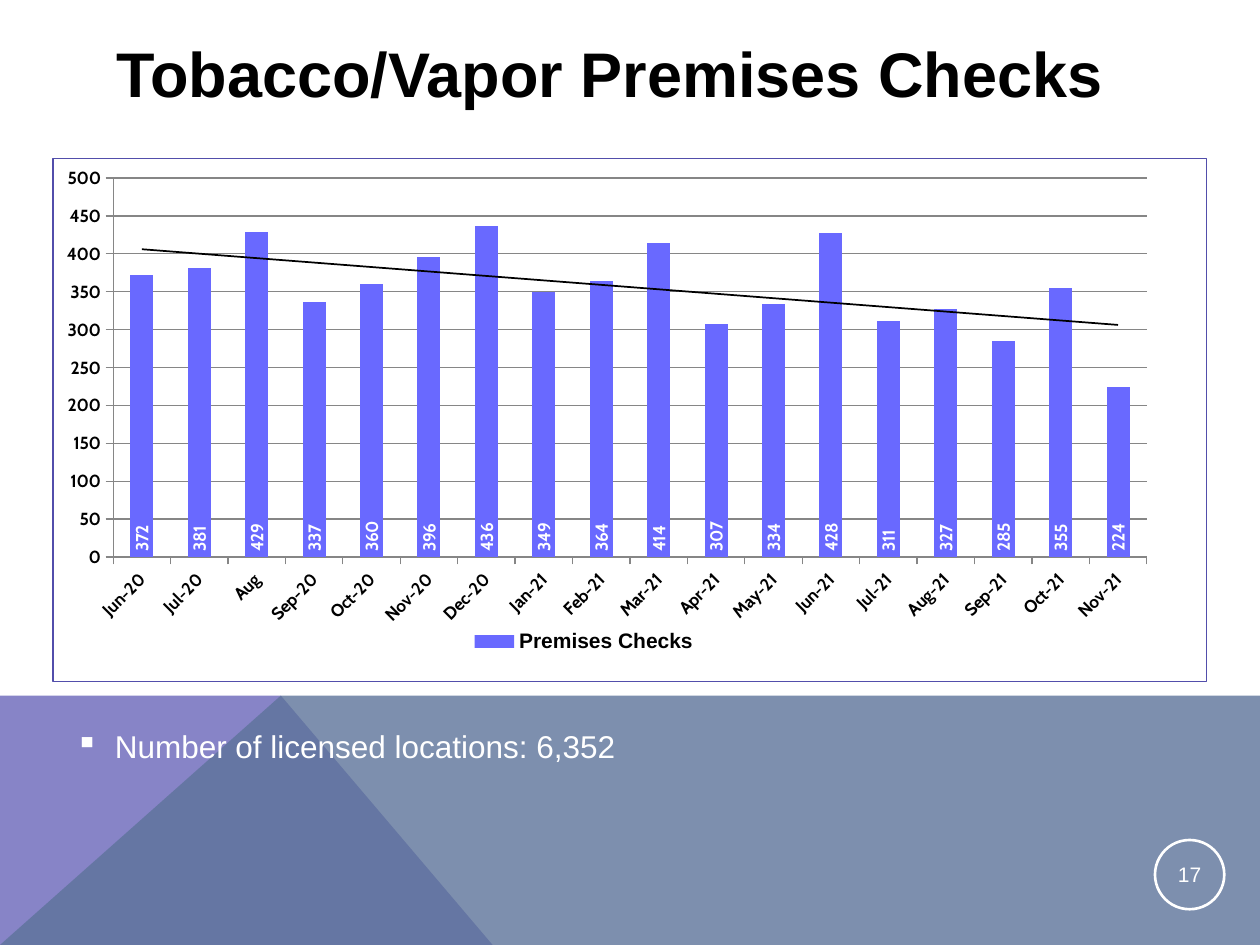
"""Build the premises checks slide: column chart with trend line over a faceted footer."""
from dataclasses import dataclass

from lxml.etree import SubElement
from pptx import Presentation
from pptx.chart.data import CategoryChartData
from pptx.dml.color import RGBColor
from pptx.enum.chart import XL_CHART_TYPE as ChartType
from pptx.enum.chart import XL_LABEL_POSITION as LabelPosition
from pptx.enum.chart import XL_LEGEND_POSITION as LegendPosition
from pptx.enum.chart import XL_TICK_MARK as TickMark
from pptx.enum.shapes import MSO_SHAPE as Preset
from pptx.enum.text import MSO_ANCHOR as Anchor
from pptx.enum.text import PP_ALIGN as Align
from pptx.oxml import parse_xml
from pptx.oxml.ns import nsdecls, qn
from pptx.util import Pt

BLACK = RGBColor(0x00, 0x00, 0x00)
WHITE = RGBColor(0xFF, 0xFF, 0xFF)
GRAY = RGBColor(0x86, 0x86, 0x86)
PURPLE = RGBColor(0x87, 0x84, 0xC7)
SLATE = RGBColor(0x5D, 0x73, 0x9A)
COLUMN_BLUE = RGBColor(0x69, 0x69, 0xFF)

CHECKS = {
    "Jun-20": 372, "Jul-20": 381, "Aug": 429, "Sep-20": 337, "Oct-20": 360, "Nov-20": 396,
    "Dec-20": 436, "Jan-21": 349, "Feb-21": 364, "Mar-21": 414, "Apr-21": 307, "May-21": 334,
    "Jun-21": 428, "Jul-21": 311, "Aug-21": 327, "Sep-21": 285, "Oct-21": 355, "Nov-21": 224,
}

TREND_LINE = f"""<c:trendline {nsdecls("c", "a")}>
<c:spPr><a:ln w="12700"><a:solidFill><a:srgbClr val="{BLACK}"/></a:solidFill></a:ln></c:spPr>
<c:trendlineType val="linear"/><c:dispRSqr val="0"/><c:dispEq val="0"/></c:trendline>"""
BORDER = f"""<c:spPr {nsdecls("c", "a")}><a:noFill/>
<a:ln w="9525"><a:solidFill><a:srgbClr val="524EAB"/></a:solidFill></a:ln></c:spPr>"""
HIDDEN_TREND_ENTRY = f"""<c:legendEntry {nsdecls("c")}>
<c:idx val="1"/><c:delete val="1"/></c:legendEntry>"""


@dataclass(frozen=True)
class Facet:
    points: tuple
    color: RGBColor
    opacity: int


FACETS = (
    Facet(((0, 540), (0, 397.5), (160.5, 397.5), (281.5, 540)), PURPLE, 100),
    Facet(((0, 540), (160.5, 397.5), (720, 397.5), (720, 540)), SLATE, 80),
)


def draw_facet(shapes, facet: Facet) -> None:
    start, *rest = [(Pt(x), Pt(y)) for x, y in facet.points]
    builder = shapes.build_freeform(*start)
    builder.add_line_segments(rest, close=True)
    outline = builder.convert_to_shape()
    outline.shadow.inherit = False
    outline.fill.solid()
    outline.fill.fore_color.rgb = facet.color
    outline.line.fill.background()
    if facet.opacity < 100:
        color = outline.fill._xPr.find(qn("a:solidFill"))[0]
        SubElement(color, qn("a:alpha"), val=str(facet.opacity * 1000))


def add_text(paragraph, text: str, size: float, color: RGBColor, bold: bool = False) -> None:
    run = paragraph.add_run()
    run.text = text
    style_font(run.font, size, color, bold, "Arial")


def style_font(font, size: float, color: RGBColor, bold: bool = True, name: str = "Cabin") -> None:
    font.size, font.bold, font.name = Pt(size), bold, name
    font.color.rgb = color


def rotate(text_owner, degrees: int) -> None:
    text_owner.find(qn("c:txPr")).find(qn("a:bodyPr")).set("rot", str(degrees * 60000))


def manual_layout(x: float, y: float, w: float, h: float, inner: bool = False):
    target = '<c:layoutTarget val="inner"/>' if inner else ""
    return parse_xml(
        f'<c:layout {nsdecls("c")}><c:manualLayout>{target}<c:xMode val="edge"/>'
        f'<c:yMode val="edge"/><c:x val="{x}"/><c:y val="{y}"/><c:w val="{w}"/>'
        f'<c:h val="{h}"/></c:manualLayout></c:layout>'
    )


def drop_layout(element) -> None:
    for layout in element.findall(qn("c:layout")):
        element.remove(layout)


def style_axis(axis) -> None:
    axis.major_tick_mark = TickMark.OUTSIDE
    axis.minor_tick_mark = TickMark.NONE
    axis.format.line.color.rgb = GRAY
    axis.format.line.width = Pt(0.75)
    style_font(axis.tick_labels.font, 10, BLACK)


def draw_checks_chart(shapes) -> None:
    data = CategoryChartData()
    data.categories = list(CHECKS)
    data.add_series("Premises Checks", list(CHECKS.values()))
    chart = shapes.add_chart(
        ChartType.COLUMN_CLUSTERED, Pt(30), Pt(90), Pt(660), Pt(300), data
    ).chart
    chart.has_title = False
    style_font(chart.font, 10, BLACK, False)
    chart._chartSpace.find(qn("c:chart")).addnext(parse_xml(BORDER))

    months, counts = chart.category_axis, chart.value_axis
    for axis in (months, counts):
        style_axis(axis)
    rotate(months._element, -45)
    counts.minimum_scale, counts.maximum_scale, counts.major_unit = 0, 500, 50
    counts.major_gridlines.format.line.color.rgb = GRAY
    counts.major_gridlines.format.line.width = Pt(0.75)

    plot = chart.plots[0]
    plot.gap_width = 150
    plot.vary_by_categories = False
    checks = plot.series[0]
    checks.format.fill.solid()
    checks.format.fill.fore_color.rgb = COLUMN_BLUE
    labels = checks.data_labels
    labels.show_value = True
    labels.position = LabelPosition.INSIDE_BASE
    style_font(labels.font, 10, WHITE)
    rotate(labels._element, -90)
    checks._element.find(qn("c:cat")).addprevious(parse_xml(TREND_LINE))

    area = chart._chartSpace.find(qn("c:chart")).find(qn("c:plotArea"))
    drop_layout(area)
    area.insert(0, manual_layout(0.052, 0.038, 0.896, 0.724, inner=True))

    chart.has_legend = True
    legend = chart.legend
    legend.position = LegendPosition.BOTTOM
    legend.include_in_layout = False
    style_font(legend.font, 12, BLACK, name="Arial")
    drop_layout(legend._element)
    side = legend._element.find(qn("c:legendPos"))
    side.addnext(manual_layout(0.36, 0.9, 0.2, 0.06))
    side.addnext(parse_xml(HIDDEN_TREND_ENTRY))


def draw_title(shapes) -> None:
    frame = shapes.add_textbox(Pt(30), Pt(29), Pt(648), Pt(25)).text_frame
    frame.word_wrap = True
    frame.vertical_anchor = Anchor.MIDDLE
    frame.margin_right = Pt(18)
    heading = frame.paragraphs[0]
    heading.alignment = Align.CENTER
    add_text(heading, "Tobacco/Vapor Premises Checks", 36, BLACK, bold=True)


def draw_page_number(shapes) -> None:
    badge = shapes.add_shape(Preset.OVAL, Pt(660), Pt(480), Pt(39.6), Pt(39.6))
    badge.shadow.inherit = False
    badge.fill.background()
    badge.line.color.rgb = WHITE
    badge.line.width = Pt(1.5)
    frame = badge.text_frame
    frame.margin_left = frame.margin_right = frame.margin_top = frame.margin_bottom = Pt(0.72)
    frame.vertical_anchor = Anchor.MIDDLE
    number = frame.paragraphs[0]
    number.alignment = Align.CENTER
    add_text(number, "17", 12, WHITE)


def draw_locations(shapes) -> None:
    frame = shapes.add_textbox(Pt(36), Pt(412), Pt(414), Pt(29)).text_frame
    frame.word_wrap = True
    locations = frame.paragraphs[0]
    properties = locations._p.get_or_add_pPr()
    properties.set("marL", str(Pt(22.5)))
    properties.set("indent", str(Pt(-22.5)))
    SubElement(properties, qn("a:buChar"), char="▪")
    add_text(locations, "Number of licensed locations: 6,352", 18, WHITE)


def main() -> None:
    deck = Presentation()
    deck.slide_width, deck.slide_height = Pt(720), Pt(540)
    shapes = deck.slides.add_slide(deck.slide_layouts[6]).shapes
    for facet in FACETS:
        draw_facet(shapes, facet)
    draw_title(shapes)
    draw_page_number(shapes)
    draw_checks_chart(shapes)
    draw_locations(shapes)
    deck.save("out.pptx")


if __name__ == "__main__":
    main()
